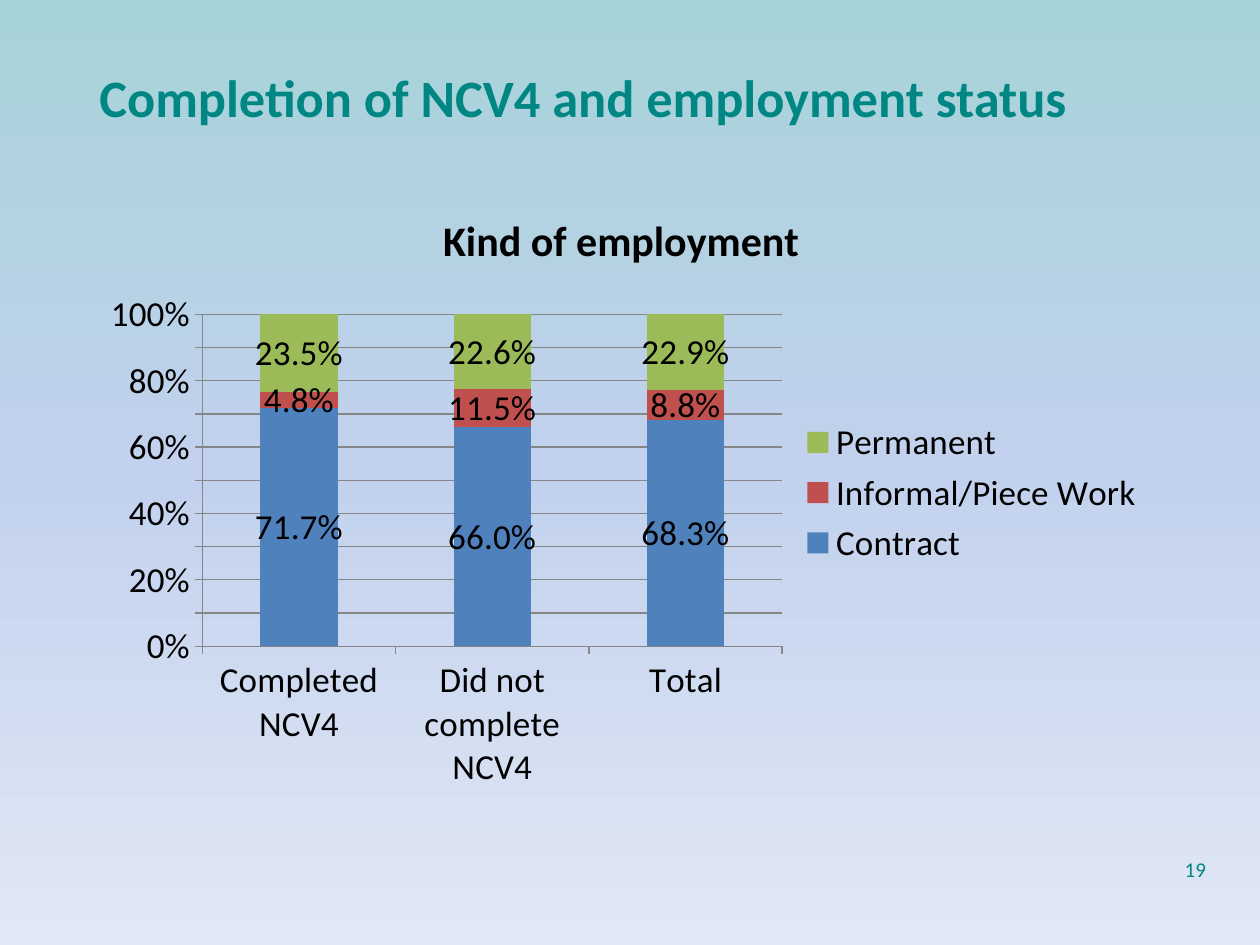
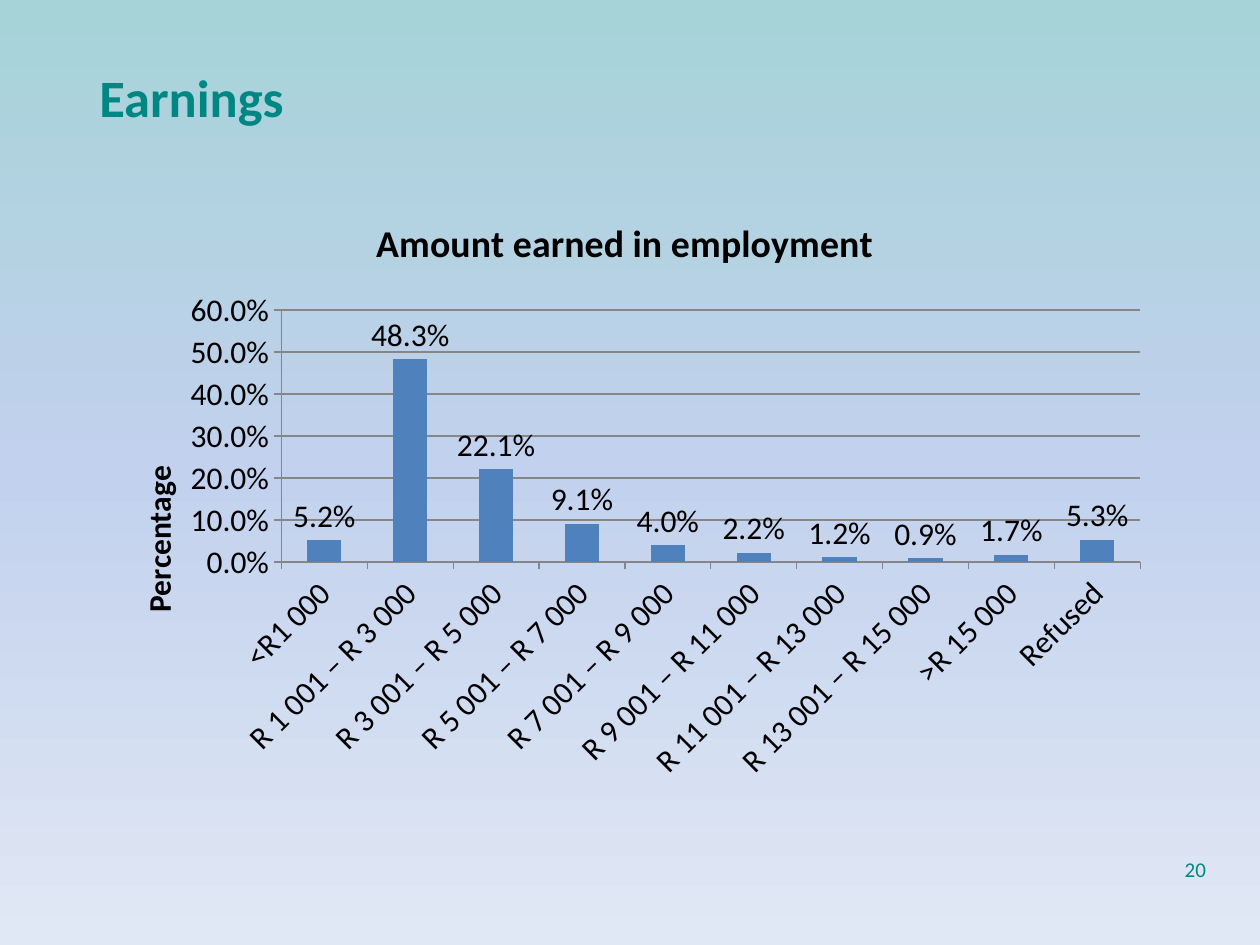
import lxml.etree
import pptx
import pptx.chart.data
import pptx.dml.color
import pptx.enum.chart
import pptx.enum.text
import pptx.oxml
import pptx.oxml.ns
import pptx.util

RGB = pptx.dml.color.RGBColor
XL = pptx.enum.chart
ALIGN = pptx.enum.text.PP_ALIGN
ANCHOR = pptx.enum.text.MSO_ANCHOR
qn = pptx.oxml.ns.qn

TEAL = RGB(0x00, 0x87, 0x84)
BLACK = RGB(0, 0, 0)
AXIS_GREY = RGB(0x86, 0x86, 0x86)
BLUE = RGB(0x4F, 0x81, 0xBD)
RED = RGB(0xC0, 0x50, 0x4D)
GREEN = RGB(0x9B, 0xBB, 0x59)
SKY = [(0, RGB(0xA6, 0xD3, 0xD8)), (50, RGB(0xC2, 0xD1, 0xED)), (100, RGB(0xE1, 0xE8, 0xF5))]

FONT = "Calibri"
TITLE_FORMAT = {"name": FONT, "size": pptx.util.Pt(30), "bold": True}
NUMBER_FORMAT = {"name": FONT, "size": pptx.util.Pt(12), "bold": False}

# Grid of 100 columns by 75 rows; boxes are column, row, columns, rows
WIDTH, HEIGHT = pptx.util.Inches(10), pptx.util.Inches(7.5)
COLUMN, ROW = WIDTH // 100, HEIGHT // 75
TITLE_BOX = (6.9, 4.7, 90, 6.1)
NUMBER_BOX = (73.4, 67.5, 23.3, 3)
EMPLOYMENT_BOX = (6.7, 14.7, 85.2, 48.8)
EARNINGS_BOX = (7, 15.1, 85.2, 47.6)

EMPLOYMENT_CATEGORIES = ["Completed NCV4", "Did not complete NCV4", "Total"]
EMPLOYMENT = [
    ("Contract", [0.717, 0.66, 0.683], BLUE),
    ("Informal/Piece Work", [0.048, 0.115, 0.088], RED),
    ("Permanent", [0.235, 0.226, 0.229], GREEN),
]
EARNING_BANDS = [
    "<R1 000", "R 1 001 – R 3 000", "R 3 001 – R 5 000", "R 5 001 – R 7 000",
    "R 7 001 – R 9 000", "R 9 001 – R 11 000", "R 11 001 – R 13 000",
    "R 13 001 – R 15 000", ">R 15 000", "Refused",
]
EARNINGS = [
    ("Series 1", [0.052, 0.483, 0.221, 0.091, 0.04, 0.022, 0.012, 0.009, 0.017, 0.053], BLUE),
]


def place(box):
    left, top, width, height = box
    return [pptx.util.Emu(round(v)) for v in
            (left * COLUMN, top * ROW, width * COLUMN, height * ROW)]


def set_font(font, formats, color):
    for key, value in formats.items():
        setattr(font, key, value)
    font.color.rgb = color


def add_text(slide, box, text, formats, align, anchor):
    frame = slide.shapes.add_textbox(*place(box)).text_frame
    frame.word_wrap = True
    frame.vertical_anchor = anchor
    paragraph = frame.paragraphs[0]
    paragraph.alignment = align
    run = paragraph.add_run()
    run.text = text
    set_font(run.font, formats, TEAL)


def add_background(slide):
    stops = "".join(f'<a:gs pos="{share * 1000}"><a:srgbClr val="{color}"/></a:gs>'
                    for share, color in SKY)
    background = pptx.oxml.parse_xml(
        f'<p:bg {pptx.oxml.ns.nsdecls("p", "a")}><p:bgPr><a:gradFill rotWithShape="1">'
        f'<a:gsLst>{stops}</a:gsLst><a:lin ang="5400000" scaled="0"/></a:gradFill>'
        '<a:effectLst/></p:bgPr></p:bg>')
    slide.element.find(qn("p:cSld")).insert(0, background)


def add_base_slide(deck, title, number):
    slide = deck.slides.add_slide(deck.slide_layouts[6])
    add_background(slide)
    add_text(slide, TITLE_BOX, title, TITLE_FORMAT, ALIGN.LEFT, ANCHOR.TOP)
    add_text(slide, NUMBER_BOX, str(number), NUMBER_FORMAT, ALIGN.RIGHT, ANCHOR.MIDDLE)
    return slide


def set_layout(element, **settings):
    """Fix a chart part's position as shares of the chart area."""
    layout = element.find(qn("c:layout"))
    if layout is None:
        layout = lxml.etree.Element(qn("c:layout"))
        element.insert(0, layout)
    manual = lxml.etree.SubElement(layout, qn("c:manualLayout"))
    for tag, value in settings.items():
        lxml.etree.SubElement(manual, qn(f"c:{tag}")).set("val", str(value))


def title_text(title, text, size):
    title.text_frame.text = text
    font = title.text_frame.paragraphs[0].runs[0].font
    set_font(font, {"name": FONT, "size": pptx.util.Pt(size), "bold": True}, BLACK)


def add_column_chart(slide, box, kind, title, categories, series, size,
                     plot_area, label_position, axis_format):
    data = pptx.chart.data.CategoryChartData(number_format="0.0%")
    data.categories = categories
    for name, values, _ in series:
        data.add_series(name, values)
    chart = slide.shapes.add_chart(kind, *place(box), data).chart
    set_font(chart.font, {"name": FONT, "size": pptx.util.Pt(size)}, BLACK)
    chart.has_legend = False
    chart.has_title = True
    title_text(chart.chart_title, title, size * 1.2)
    chart.chart_title.include_in_layout = False

    # Columns and their labels
    plot = chart.plots[0]
    plot.gap_width = 150
    plot.vary_by_categories = False
    for column, (_, _, color) in zip(plot.series, series):
        column.format.fill.solid()
        column.format.fill.fore_color.rgb = color
        labels = column.data_labels
        for key, value in {"show_value": True, "number_format": "0.0%",
                           "number_format_is_linked": False,
                           "position": label_position}.items():
            setattr(labels, key, value)

    # Axes and gridlines
    value_axis = chart.value_axis
    value_axis.has_major_gridlines = True
    value_axis.tick_labels.number_format = axis_format
    value_axis.tick_labels.number_format_is_linked = False
    value_axis.major_unit = 0.1
    for axis in (chart.category_axis, value_axis):
        axis.major_tick_mark = XL.XL_TICK_MARK.OUTSIDE
    for part in (chart.category_axis, value_axis, value_axis.major_gridlines):
        part.format.line.color.rgb = AXIS_GREY
        part.format.line.width = pptx.util.Pt(0.75)

    # Plot position and clear chart area
    chart_space = chart.element
    left, top, width, height = plot_area
    set_layout(chart_space.chart.plotArea, layoutTarget="inner", xMode="edge",
               yMode="edge", x=left, y=top, w=width, h=height)
    chart_space.chart.addnext(pptx.oxml.parse_xml(
        f'<c:spPr {pptx.oxml.ns.nsdecls("c", "a")}><a:noFill/>'
        '<a:ln><a:noFill/></a:ln></c:spPr>'))
    return chart


def add_employment_slide(deck, number):
    slide = add_base_slide(deck, "Completion of NCV4 and employment status", number)
    chart = add_column_chart(
        slide, EMPLOYMENT_BOX, XL.XL_CHART_TYPE.COLUMN_STACKED_100, "Kind of employment",
        EMPLOYMENT_CATEGORIES, EMPLOYMENT, 20, (0.11, 0.21, 0.54, 0.54),
        XL.XL_LABEL_POSITION.CENTER, "0%")
    chart.plots[0].overlap = 100
    chart.has_legend = True
    chart.legend.position = XL.XL_LEGEND_POSITION.RIGHT
    chart.legend.include_in_layout = False


def add_earnings_slide(deck, number):
    slide = add_base_slide(deck, "Earnings", number)
    chart = add_column_chart(
        slide, EARNINGS_BOX, XL.XL_CHART_TYPE.COLUMN_CLUSTERED, "Amount earned in employment",
        EARNING_BANDS, EARNINGS, 18, (0.18, 0.2, 0.8, 0.42),
        XL.XL_LABEL_POSITION.OUTSIDE_END, "0.0%")
    chart.value_axis.minimum_scale = 0
    chart.value_axis.maximum_scale = 0.6
    axis_title = chart.value_axis.axis_title
    title_text(axis_title, "Percentage", 18)
    set_layout(axis_title._element, xMode="edge", yMode="edge", x=0.04, y=0.45)

    # Slanted earning bands
    bands = chart.category_axis
    bands.tick_labels.font.size = pptx.util.Pt(18)
    bands._element.find(qn("c:txPr")).find(qn("a:bodyPr")).set("rot", "-2700000")


def main():
    deck = pptx.Presentation()
    deck.slide_width, deck.slide_height = WIDTH, HEIGHT
    for number, build in enumerate((add_employment_slide, add_earnings_slide), start=19):
        build(deck, number)
    deck.save("out.pptx")


if __name__ == "__main__":
    main()
